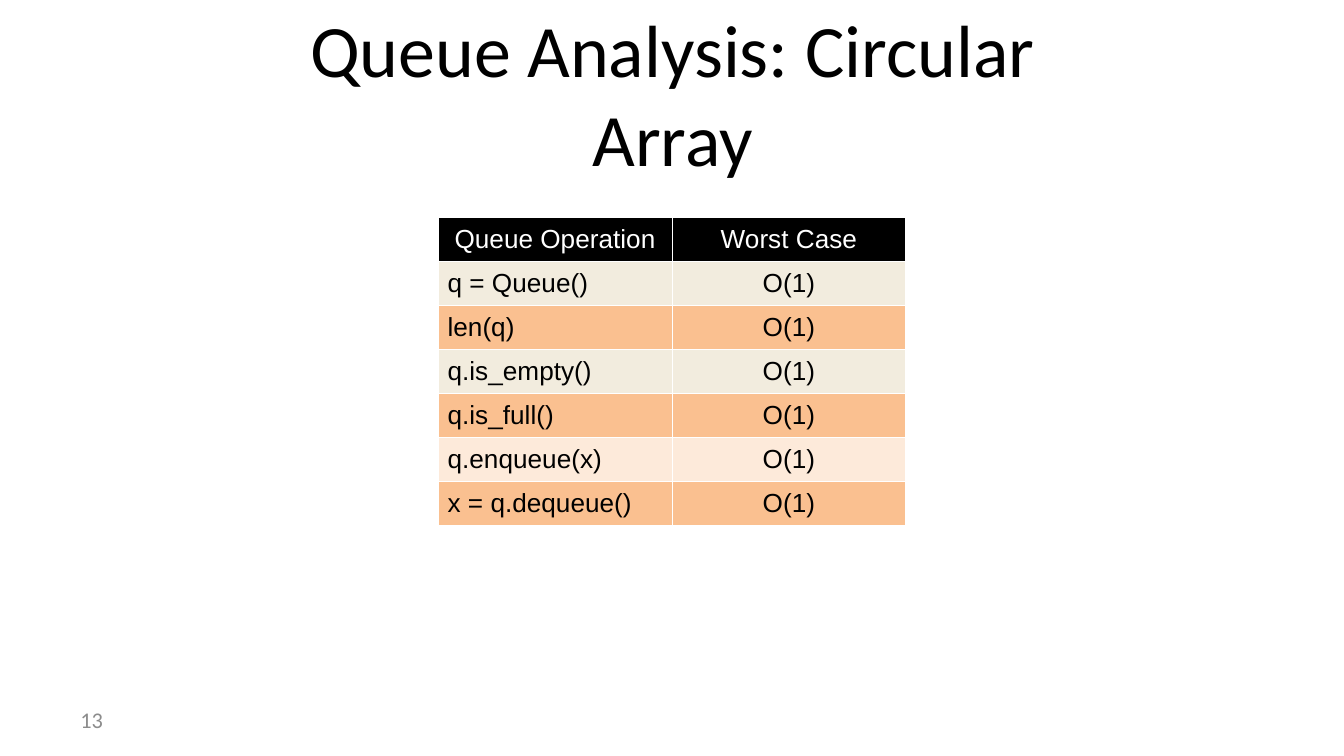
"""Build the slide on the worst-case cost of circular array queue operations."""
from dataclasses import dataclass

import lxml.etree
import pptx
import pptx.dml.color
import pptx.enum.text
import pptx.oxml.ns
import pptx.util

Cm = pptx.util.Cm
Pt = pptx.util.Pt
Align = pptx.enum.text.PP_ALIGN
Anchor = pptx.enum.text.MSO_ANCHOR
qn = pptx.oxml.ns.qn

BLACK = "000000"
WHITE = "FFFFFF"
CREAM = "F2ECDE"
ORANGE = "FAC090"
PEACH = "FDEADA"
GREY = "8C8C8C"


@dataclass(frozen=True)
class Row:
    operation: str
    worst_case: str
    fill: str
    ink: str = BLACK
    operation_align: Align = Align.LEFT


ROWS = [
    Row("Queue Operation", "Worst Case", BLACK, WHITE, Align.CENTER),
    Row("q = Queue()", "O(1)", CREAM),
    Row("len(q)", "O(1)", ORANGE),
    Row("q.is_empty()", "O(1)", CREAM),
    Row("q.is_full()", "O(1)", ORANGE),
    Row("q.enqueue(x)", "O(1)", PEACH),
    Row("x = q.dequeue()", "O(1)", ORANGE),
]


def rgb(value: str) -> pptx.dml.color.RGBColor:
    return pptx.dml.color.RGBColor.from_string(value)


def add_run(paragraph, text: str, font: str, size: float, color: str) -> None:
    run = paragraph.add_run()
    run.text = text
    run.font.name = font
    run.font.size = Pt(size)
    run.font.bold = False
    run.font.color.rgb = rgb(color)


def add_borders(cell, color: str, width: float) -> None:
    properties = cell._tc.get_or_add_tcPr()
    for side in ("lnL", "lnR", "lnT", "lnB"):
        border = lxml.etree.SubElement(properties, qn(f"a:{side}"), w=str(Pt(width)))
        fill = lxml.etree.SubElement(border, qn("a:solidFill"))
        lxml.etree.SubElement(fill, qn("a:srgbClr"), val=color)


def fill_cell(cell, text: str, row: Row, align: Align) -> None:
    add_borders(cell, WHITE, 0.57)
    cell.fill.solid()
    cell.fill.fore_color.rgb = rgb(row.fill)
    cell.vertical_anchor = Anchor.MIDDLE
    cell.margin_left = cell.margin_right = Cm(0.18)
    cell.margin_top, cell.margin_bottom = Cm(0.15), Cm(0.13)
    paragraph = cell.text_frame.paragraphs[0]
    paragraph.alignment = align
    paragraph.line_spacing = 0.93
    add_run(paragraph, text, "Arial", 14, row.ink)


def add_title(slide, text: str) -> None:
    title = slide.shapes.title
    title.left, title.top, title.width, title.height = Cm(4.11), Cm(0.56), Cm(17.2), Cm(2.39)
    frame = title.text_frame
    frame.auto_size = pptx.enum.text.MSO_AUTO_SIZE.NONE
    frame.word_wrap = True
    frame.vertical_anchor = Anchor.MIDDLE
    frame.margin_left = frame.margin_right = Cm(0.18)
    frame.margin_top, frame.margin_bottom = Cm(0.08), Cm(0.1)
    frame.paragraphs[0].alignment = Align.CENTER
    add_run(frame.paragraphs[0], text, "Calibri", 39.6, BLACK)


def add_cost_table(slide, rows: list[Row]) -> None:
    column_width, row_height = Cm(4.42), Cm(0.81)
    costs = slide.shapes.add_table(
        len(rows), 2, Cm(8.28), Cm(4.11), 2 * column_width, len(rows) * row_height
    ).table
    for index, row in enumerate(rows):
        costs.rows[index].height = row_height
        fill_cell(costs.cell(index, 0), row.operation, row, row.operation_align)
        fill_cell(costs.cell(index, 1), row.worst_case, row, Align.CENTER)


def add_page_number(slide, number: str) -> None:
    page = slide.shapes.add_textbox(Cm(1.27), Cm(13.23), Cm(5.92), Cm(0.76))
    page.text_frame.word_wrap = True
    page.text_frame.vertical_anchor = Anchor.MIDDLE
    add_run(page.text_frame.paragraphs[0], number, "Calibri", 12, GREY)


def main() -> None:
    deck = pptx.Presentation()
    deck.slide_width, deck.slide_height = Cm(25.4), Cm(14.29)
    slide = deck.slides.add_slide(deck.slide_layouts[5])
    add_page_number(slide, "13")
    add_title(slide, "Queue Analysis: Circular Array")
    add_cost_table(slide, ROWS)
    deck.save("out.pptx")


if __name__ == "__main__":
    main()
